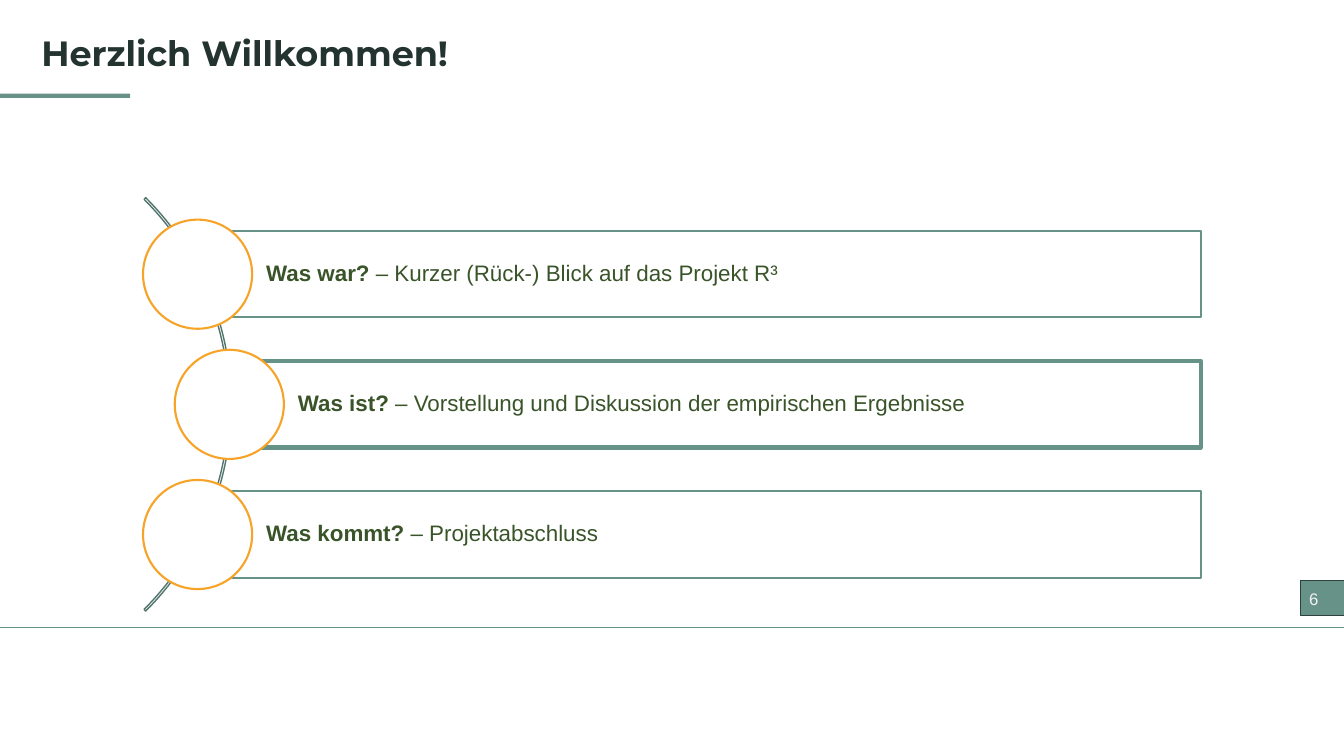
import pptx
import pptx.util
import pptx.dml.color
import pptx.enum.shapes
import pptx.enum.text
import pptx.oxml
import pptx.oxml.ns

Cm, Pt = pptx.util.Cm, pptx.util.Pt
RGBColor = pptx.dml.color.RGBColor
SHAPE = pptx.enum.shapes.MSO_SHAPE
ANCHOR = pptx.enum.text.MSO_ANCHOR
LEFT = pptx.enum.text.PP_ALIGN.LEFT

WHITE = RGBColor(0xFF, 0xFF, 0xFF)
TITLE_DARK = RGBColor(0x23, 0x33, 0x2F)
ACCENT = RGBColor(0x67, 0x91, 0x86)
GREEN = RGBColor(0x67, 0x92, 0x88)
ARC_GREEN = RGBColor(0x52, 0x75, 0x6D)
BADGE_EDGE = RGBColor(0x2D, 0x40, 0x3C)
BADGE_TEXT = RGBColor(0xF2, 0xF2, 0xF2)
TEXT_GREEN = RGBColor(0x39, 0x54, 0x29)
ORANGE = RGBColor(0xF6, 0xA3, 0x27)


def add_shape(kind, x, y, w, h, fill=None, line=None, width=1):
    """Add a shadowless shape, measured in cm; None means no fill or line."""
    sp = slide.shapes.add_shape(kind, Cm(x), Cm(y), Cm(w), Cm(h))
    sp.shadow.inherit = False
    if fill is None:
        sp.fill.background()
    else:
        sp.fill.solid()
        sp.fill.fore_color.rgb = fill
    if line is None:
        sp.line.fill.background()
    else:
        sp.line.color.rgb = line
        sp.line.width = Pt(width)
    return sp


def add_run(p, text, size, color, bold=False, font="Arial"):
    r = p.add_run()
    r.text = text
    r.font.name = font
    r.font.size = Pt(size)
    r.font.bold = bold
    r.font.color.rgb = color


prs = pptx.Presentation()
prs.slide_width, prs.slide_height = Cm(33.87), Cm(19.05)
slide = prs.slides.add_slide(prs.slide_layouts[5])

# Footer line, title accent and page number
footer = slide.shapes.add_connector(
    pptx.enum.shapes.MSO_CONNECTOR.STRAIGHT, Cm(-0.2), Cm(15.8), Cm(34.14), Cm(15.8))
footer.line.color.rgb = GREEN
footer.line.width = Pt(0.75)
footer._element.spPr.append(
    pptx.oxml.parse_xml("<a:effectLst %s/>" % pptx.oxml.ns.nsdecls("a")))

add_shape(SHAPE.ROUNDED_RECTANGLE, -0.25, 2.36, 3.53, 0.11, fill=ACCENT)
add_shape(SHAPE.RECTANGLE, 32.77, 14.63, 1.32, 0.88, GREEN, BADGE_EDGE)
number = slide.shapes.add_textbox(Cm(32.74), Cm(14.71), Cm(1.63), Cm(0.77))
number.text_frame.word_wrap = True
add_run(number.text_frame.paragraphs[0], "6", 12, BADGE_TEXT)

# Title
title = slide.shapes.title
title.left, title.top, title.width, title.height = Cm(0.79), Cm(0.79), Cm(20), Cm(1.32)
tf = title.text_frame
tf.auto_size = pptx.enum.text.MSO_AUTO_SIZE.NONE
tf.vertical_anchor = ANCHOR.TOP
p = tf.paragraphs[0]
p.alignment = LEFT
p.line_spacing = 0.9
add_run(p, "Herzlich Willkommen!", 25, TITLE_DARK, True, "Montserrat")

# Agenda: three bars with circles strung along an arc
ARC_SIZE, BAR_HEIGHT, CIRCLE = 14.73, 2.18, 2.75
BAR_RIGHT, MIDDLE, PITCH = 30.26, 10.19, 3.28

arc = add_shape(SHAPE.BLOCK_ARC, -8.9, MIDDLE - ARC_SIZE / 2, ARC_SIZE, ARC_SIZE,
                line=ARC_GREEN)
for i, value in enumerate((189, 27, 0.004)):
    arc.adjustments[i] = value

agenda = [
    ("Was war? ", "– Kurzer (Rück-) Blick auf das Projekt R³", 4.98, 1.5),
    ("Was ist? ", "– Vorstellung und Diskussion der empirischen Ergebnisse", 5.78, 3),
    ("Was kommt? ", "– Projektabschluss", 4.98, 1.5),
]
for i, (question, answer, x, width) in enumerate(agenda):
    y = MIDDLE + (i - 1) * PITCH
    bar = add_shape(SHAPE.RECTANGLE, x, y - BAR_HEIGHT / 2, BAR_RIGHT - x, BAR_HEIGHT,
                    line=GREEN, width=width)
    tf = bar.text_frame
    tf.word_wrap = True
    tf.vertical_anchor = ANCHOR.MIDDLE
    tf.margin_left = Cm(1.73)
    tf.margin_top = tf.margin_right = tf.margin_bottom = Cm(0.1)
    p = tf.paragraphs[0]
    p.alignment = LEFT
    p.line_spacing = 0.9
    add_run(p, question, 16, TEXT_GREEN, True)
    add_run(p, answer, 16, TEXT_GREEN)
    add_shape(SHAPE.OVAL, x - CIRCLE / 2, y - CIRCLE / 2, CIRCLE, CIRCLE,
              WHITE, ORANGE, 1.5)

prs.save("out.pptx")
